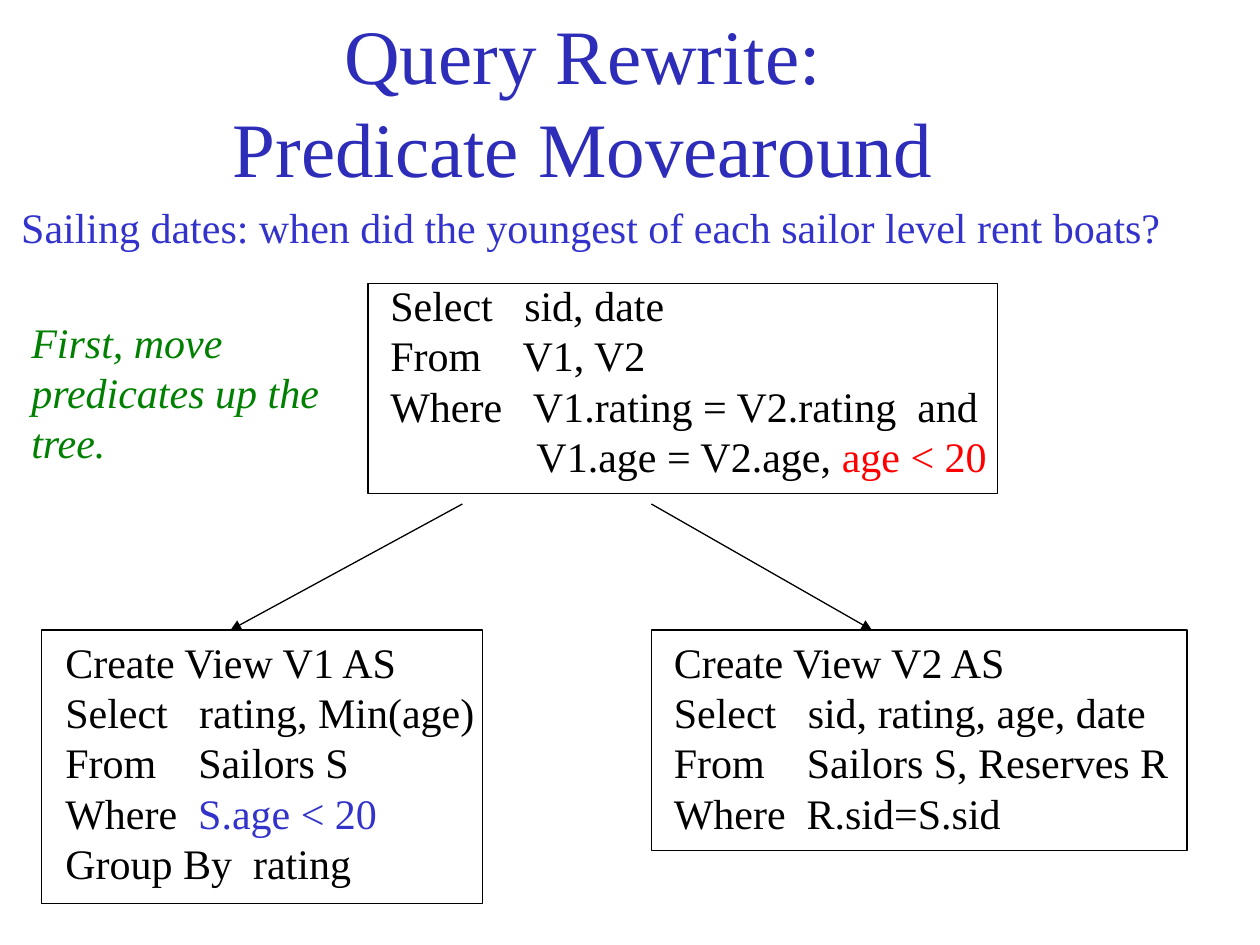
"""Builds the predicate movearound slide: a query tree with two views."""
from lxml.etree import SubElement
from pptx import Presentation
from pptx.dml.color import RGBColor
from pptx.enum.shapes import MSO_CONNECTOR, MSO_SHAPE
from pptx.enum.text import MSO_ANCHOR, MSO_AUTO_SIZE as AutoSize, PP_ALIGN
from pptx.oxml.ns import qn
from pptx.util import Inches, Pt

COLORS = {"title": "2D2DB9", "black": "000000", "blue": "3333CC",
          "red": "FF0000", "green": "008000"}


class QuerySlide:
    font_name = "Times New Roman"
    body_size = 24
    line_width = Pt(0.75)

    def __init__(self, deck):
        self.slide = deck.slides.add_slide(deck.slide_layouts[5])
        self.shapes = self.slide.shapes

    def color(self, name):
        return RGBColor.from_string(COLORS[name])

    def style(self, run, color, size=body_size, italic=False):
        run.font.name = self.font_name
        run.font.size = Pt(size)
        run.font.color.rgb = self.color(color)
        run.font.italic = italic

    def title(self, text, left, top, width, height):
        heading = self.shapes.title
        heading.left, heading.top = Inches(left), Inches(top)
        heading.width, heading.height = Inches(width), Inches(height)
        frame = heading.text_frame
        frame.text = text
        frame.auto_size = AutoSize.NONE
        frame.vertical_anchor = MSO_ANCHOR.MIDDLE
        paragraph = frame.paragraphs[0]
        paragraph.alignment = PP_ALIGN.CENTER
        self.style(paragraph.runs[0], "title", size=44)

    def text(self, lines, left, top, width, color="black", wrap=False, italic=False):
        height = 0.1 + 0.4 * len(lines)
        box = self.shapes.add_textbox(Inches(left), Inches(top), Inches(width), Inches(height))
        frame = box.text_frame
        frame.word_wrap = wrap
        frame.auto_size = AutoSize.SHAPE_TO_FIT_TEXT
        frame.text = "\n".join(lines)
        for paragraph in frame.paragraphs:
            self.style(paragraph.runs[0], color, italic=italic)
        return frame

    def predicate(self, paragraph, text, color):
        run = paragraph.add_run()
        run.text = text
        self.style(run, color)

    def border(self, left, top, width, height):
        outline = self.shapes.add_shape(MSO_SHAPE.RECTANGLE, Inches(left), Inches(top),
                                        Inches(width), Inches(height))
        outline.shadow.inherit = False
        outline.fill.background()
        outline.line.color.rgb = self.color("black")
        outline.line.width = self.line_width

    def arrow(self, start, end):
        link = self.shapes.add_connector(MSO_CONNECTOR.STRAIGHT,
                                         *map(Inches, start), *map(Inches, end))
        link.line.color.rgb = self.color("black")
        link.line.width = self.line_width
        SubElement(link.line._get_or_add_ln(), qn("a:tailEnd"), type="triangle")
        SubElement(link._element.spPr, qn("a:effectLst"))


def main():
    deck = Presentation()
    deck.slide_width, deck.slide_height = Inches(10), Inches(7.5)
    page = QuerySlide(deck)
    page.title("Query Rewrite: Predicate Movearound", 1.5, 0.17, 6.25, 1.25)

    view1 = page.text(["Create View V1 AS", "Select   rating, Min(age)", "From    Sailors S",
                       "Where  ", "Group By  rating"], 0.42, 5, 3.45)
    page.predicate(view1.paragraphs[3], "S.age < 20", "blue")
    page.text(["Create View V2 AS", "Select   sid, rating, age, date",
               "From    Sailors S, Reserves R", "Where  R.sid=S.sid"], 5.25, 5, 4.13)
    query = page.text(["Select   sid, date", "From    V1, V2",
                       "Where   V1.rating = V2.rating  and",
                       "              V1.age = V2.age, "], 3, 2.17, 4.94)
    page.predicate(query.paragraphs[3], "age < 20", "red")

    page.arrow((3.67, 4), (1.83, 5))
    page.arrow((5.17, 4), (6.92, 5))
    page.text(["Sailing dates: when did the youngest of each sailor level rent boats?"],
              0.07, 1.55, 9.32, color="blue")
    page.border(0.33, 5, 3.5, 2.17)
    page.border(5.17, 5, 4.25, 1.75)
    page.border(2.92, 2.25, 5, 1.67)
    page.text(["First, move", "predicates up the", "tree."], 0.15, 2.46, 2.85,
              color="green", wrap=True, italic=True)
    deck.save("out.pptx")


if __name__ == "__main__":
    main()
